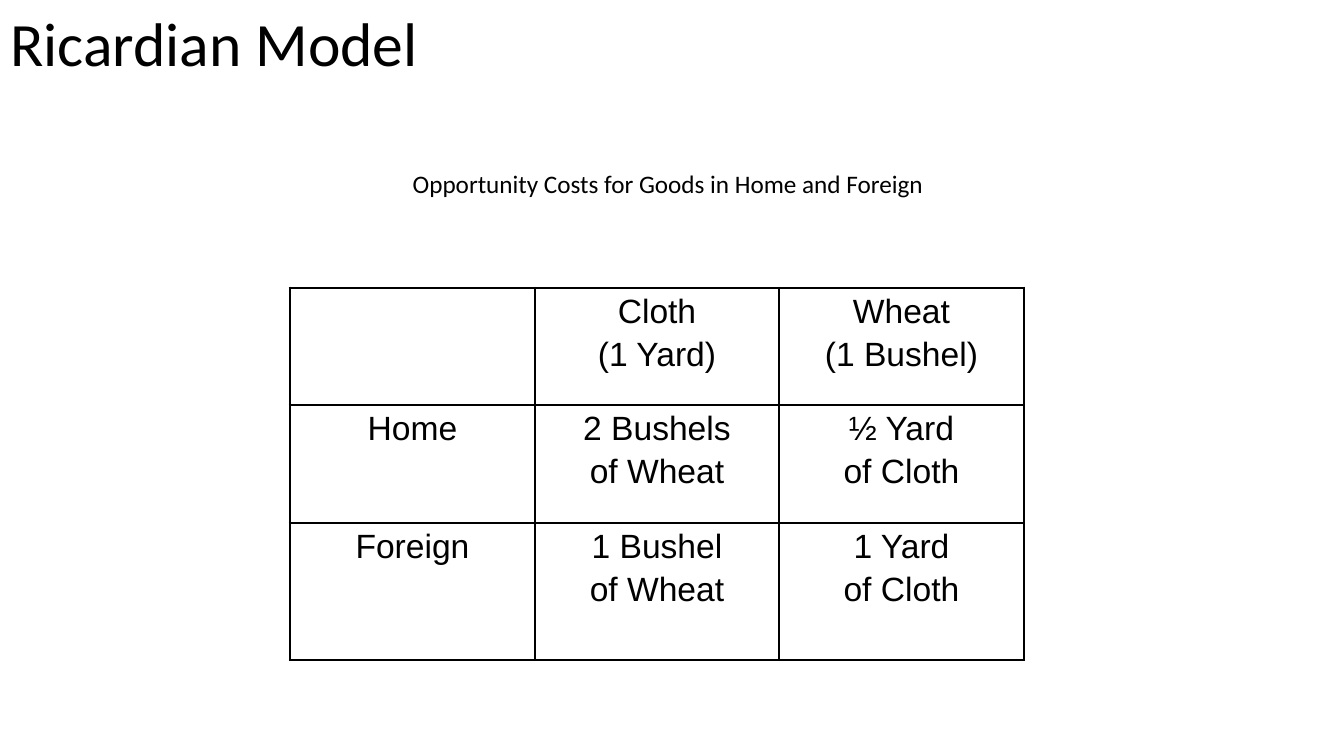
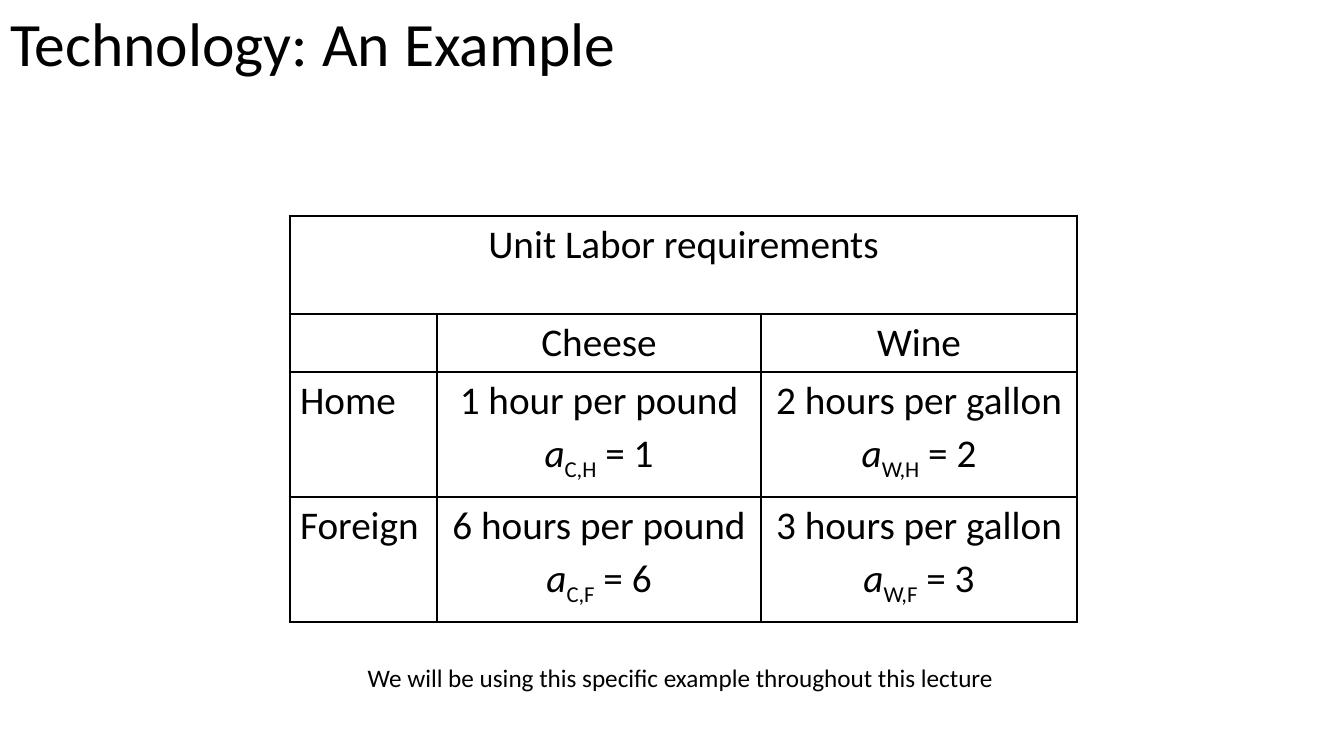
"""Two slides on comparative advantage, each with a title, a table and a caption."""
from lxml import etree
from pptx import Presentation
from pptx.dml.color import RGBColor
from pptx.enum.text import MSO_ANCHOR, PP_ALIGN
from pptx.oxml.ns import qn
from pptx.util import Emu, Pt

LEFT, MID = PP_ALIGN.LEFT, PP_ALIGN.CENTER
MIDDLE = MSO_ANCHOR.MIDDLE
INK = {"text": "000000", "line": "000000"}
THICK, THIN = Pt(2.25), Pt(1)
TITLE_ONLY = 5


def px(n):
    return Emu(round(n * 914400 / 100.8))


def style(para, size, face, align):
    para.alignment = align
    for run in para.runs:
        run.font.size = Pt(size)
        run.font.name = face
        run.font.color.rgb = RGBColor.from_string(INK["text"])


slides = [
    {
        "title": "Ricardian Model",
        "note": "Opportunity Costs for Goods in Home and Foreign",
        "box": (363, 163, 610, 40),
        "top": 288,
        "cols": [245, 244, 245],
        "rows": [117, 118, 137],
        "face": "Arial",
        "size": 24,
        "head": MID,
        "cells": [
            ["", "Cloth\n(1 Yard)", "Wheat\n(1 Bushel)"],
            ["Home", "2 Bushels\nof Wheat", "½ Yard\nof Cloth"],
            ["Foreign", "1 Bushel\nof Wheat", "1 Yard\nof Cloth"],
        ],
    },
    {
        "title": "Technology: An Example",
        "note": "We will be using this specific example throughout this lecture",
        "box": (257, 657, 847, 40),
        "top": 216,
        "cols": [147, 324, 316],
        "rows": [98, 58, 125, 125],
        "face": "Calibri",
        "size": 28,
        "head": LEFT,
        "cells": [
            ["Unit Labor requirements"],
            ["", "Cheese", "Wine"],
            ["Home", "1 hour per pound\na_C,H_ = 1", "2 hours per gallon\na_W,H_ = 2"],
            ["Foreign", "6 hours per pound\na_C,F_ = 6", "3 hours per gallon\na_W,F_ = 3"],
        ],
    },
]

deck = Presentation()
deck.slide_width, deck.slide_height = px(1344), px(756)

for data in slides:
    slide = deck.slides.add_slide(deck.slide_layouts[TITLE_ONLY])
    title = slide.shapes.title
    title.left, title.top, title.width, title.height = px(0), px(0), px(1344), px(93)
    title.text_frame.text = data["title"]
    title.text_frame.vertical_anchor = MIDDLE
    para = title.text_frame.paragraphs[0]
    para.line_spacing = 0.9
    style(para, 44, "Calibri", LEFT)

    note = slide.shapes.add_textbox(*map(px, data["box"])).text_frame
    note.word_wrap = True
    note.text = data["note"]
    style(note.paragraphs[0], 18, "Calibri", MID)

    cols, rows = data["cols"], data["rows"]
    table = slide.shapes.add_table(
        len(rows), len(cols), px(290), px(data["top"]), px(sum(cols)), px(sum(rows))
    ).table
    table.first_row = table.horz_banding = False
    for c, width in enumerate(cols):
        table.columns[c].width = px(width)

    for r, texts in enumerate(data["cells"]):
        table.rows[r].height = px(rows[r])
        if len(texts) == 1:
            table.cell(r, 0).merge(table.cell(r, len(cols) - 1))
        for c, text in enumerate(texts):
            cell = table.cell(r, c)
            span = cell.span_width if cell.is_merge_origin else 1
            align = data["head"] if c == 0 and span == 1 else MID
            cell.text_frame.text = text
            for para in cell.text_frame.paragraphs:
                parts = para.text.split("_")
                if len(parts) == 3:
                    para.text = parts[0]
                    para.runs[0].font.italic = True
                    sub = para.add_run()
                    sub.text = parts[1]
                    sub.font._element.set("baseline", "-25000")
                    para.add_run().text = parts[2]
                para.space_before = Pt(data["size"] // 6)
                style(para, data["size"], data["face"], align)

            props = cell._tc.get_or_add_tcPr()
            edges = {
                "a:lnL": c == 0,
                "a:lnR": c + span == len(cols),
                "a:lnT": r == 0,
                "a:lnB": r == len(rows) - 1,
            }
            for tag, outer in edges.items():
                line = etree.SubElement(props, qn(tag), w=str(THICK if outer else THIN))
                fill = etree.SubElement(line, qn("a:solidFill"))
                etree.SubElement(fill, qn("a:srgbClr"), val=INK["line"])
            cell.fill.background()

deck.save("out.pptx")
